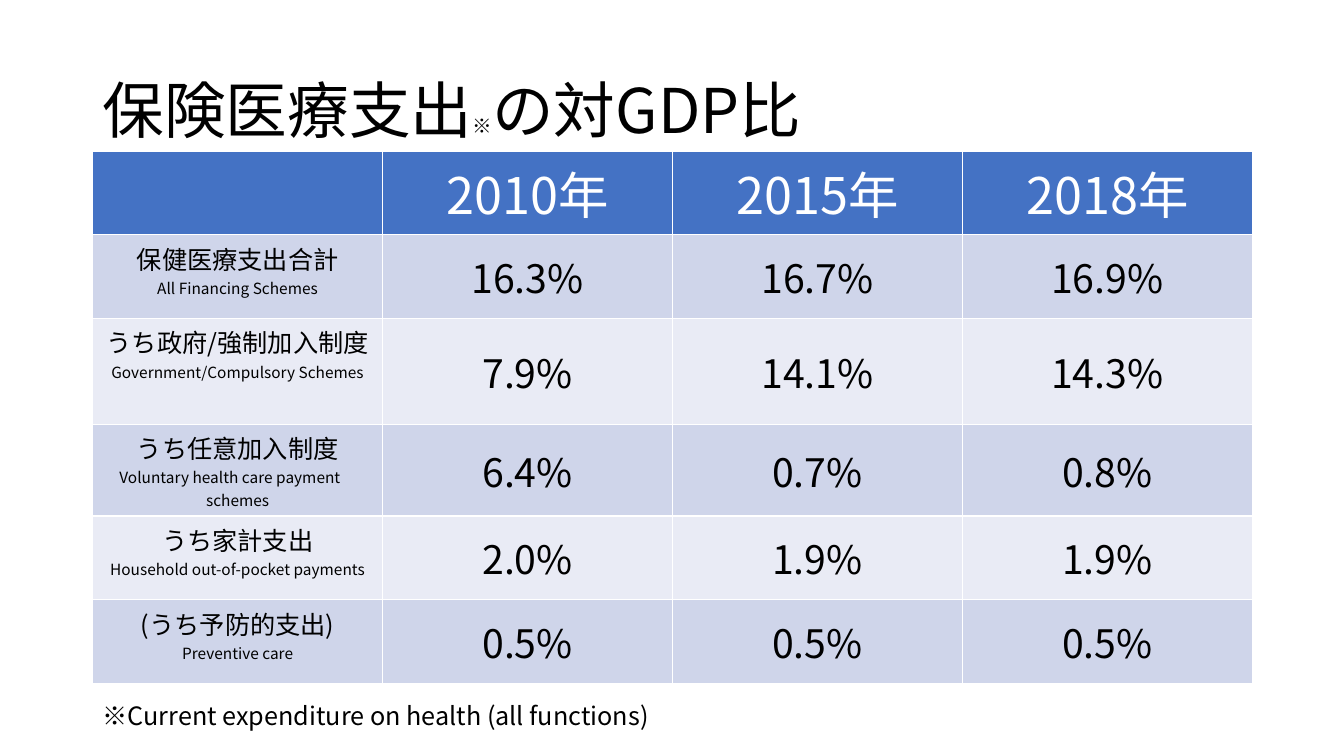
from dataclasses import dataclass

from lxml.etree import SubElement
from pptx import Presentation
from pptx.dml.color import RGBColor
from pptx.enum.text import MSO_ANCHOR, PP_ALIGN
from pptx.oxml.ns import qn
from pptx.slide import Slide
from pptx.table import Table, _Cell
from pptx.text.text import TextFrame, _Run
from pptx.util import Inches, Pt


@dataclass(frozen=True)
class Theme:
    font: str = "Noto Sans CJK JP"
    text: str = "000000"
    white: str = "FFFFFF"
    header: str = "4472C4"
    bands: tuple[str, str] = ("CFD5EA", "E9EBF5")
    title_size: int = 44
    mark_size: int = 14
    header_size: int = 36
    value_size: int = 28
    label_size: int = 18
    english_size: int = 11
    border_width: int = 1


THEME = Theme()
LEFT, WIDTH = 0.92, 11.5
ROW_HEIGHT = 0.83


@dataclass(frozen=True)
class Scheme:
    label: str
    english: str
    shares: tuple[str, str, str]
    height: float = ROW_HEIGHT


YEARS = ("2010年", "2015年", "2018年")
SCHEMES = (
    Scheme("保健医療支出合計", "All Financing Schemes", ("16.3%", "16.7%", "16.9%")),
    Scheme("うち政府/強制加入制度", "Government/Compulsory Schemes", ("7.9%", "14.1%", "14.3%"), 1.05),
    Scheme("うち任意加入制度", "Voluntary health care payment　schemes", ("6.4%", "0.7%", "0.8%"), 0.91),
    Scheme("うち家計支出", "Household out-of-pocket payments", ("2.0%", "1.9%", "1.9%")),
    Scheme("(うち予防的支出)", "Preventive care", ("0.5%", "0.5%", "0.5%")),
)


def format_run(run: _Run, size: int, color: str = THEME.text) -> None:
    run.font.name = THEME.font
    run.font.size = Pt(size)
    run.font.bold = False
    run.font.color.rgb = RGBColor.from_string(color)
    SubElement(run.font._element, qn("a:ea"), typeface=THEME.font)


def add_text_box(slide: Slide, top: float, width: float, height: float) -> TextFrame:
    box = slide.shapes.add_textbox(Inches(LEFT), Inches(top), Inches(width), Inches(height))
    box.text_frame.word_wrap = True
    return box.text_frame


def add_title(slide: Slide) -> None:
    frame = add_text_box(slide, 0.4, WIDTH, 1.45)
    frame.vertical_anchor = MSO_ANCHOR.MIDDLE
    paragraph = frame.paragraphs[0]
    paragraph.line_spacing = 0.9
    for text, size in (
        ("保険医療支出", THEME.title_size),
        ("※", THEME.mark_size),
        ("の対GDP比", THEME.title_size),
    ):
        run = paragraph.add_run()
        run.text = text
        format_run(run, size)


def style_cell(cell: _Cell, fill: str) -> None:
    properties = cell._tc.get_or_add_tcPr()
    for side in ("lnL", "lnR", "lnT", "lnB"):
        line = SubElement(properties, qn(f"a:{side}"), w=str(Pt(THEME.border_width)))
        line_fill = SubElement(line, qn("a:solidFill"))
        SubElement(line_fill, qn("a:srgbClr"), val=THEME.white)
    cell.fill.solid()
    cell.fill.fore_color.rgb = RGBColor.from_string(fill)


def write_cell(cell: _Cell, text: str, sizes: tuple[int, ...], color: str = THEME.text) -> None:
    cell.text_frame.text = text
    for paragraph, size in zip(cell.text_frame.paragraphs, sizes):
        paragraph.alignment = PP_ALIGN.CENTER
        for run in paragraph.runs:
            format_run(run, size, color)


def fill_header(table: Table) -> None:
    for column, year in enumerate(("", *YEARS)):
        cell = table.cell(0, column)
        style_cell(cell, THEME.header)
        write_cell(cell, year, (THEME.header_size,), THEME.white)


def fill_scheme(table: Table, row: int, scheme: Scheme) -> None:
    table.rows[row].height = Inches(scheme.height)
    band = THEME.bands[(row - 1) % 2]
    label_cell = table.cell(row, 0)
    style_cell(label_cell, band)
    write_cell(label_cell, f"{scheme.label}\n{scheme.english}", (THEME.label_size, THEME.english_size))
    for column, share in enumerate(scheme.shares, start=1):
        cell = table.cell(row, column)
        style_cell(cell, band)
        cell.vertical_anchor = MSO_ANCHOR.MIDDLE
        write_cell(cell, share, (THEME.value_size,))


def add_expenditure_table(slide: Slide) -> None:
    height = ROW_HEIGHT + sum(scheme.height for scheme in SCHEMES)
    table = slide.shapes.add_table(
        len(SCHEMES) + 1, len(YEARS) + 1,
        Inches(LEFT), Inches(1.5), Inches(WIDTH), Inches(height),
    ).table
    table.rows[0].height = Inches(ROW_HEIGHT)
    fill_header(table)
    for row, scheme in enumerate(SCHEMES, start=1):
        fill_scheme(table, row, scheme)


def add_footnote(slide: Slide) -> None:
    frame = add_text_box(slide, 6.9, 8.26, 0.4)
    frame.text = "※Current expenditure on health (all functions)"
    format_run(frame.paragraphs[0].runs[0], THEME.label_size)


def main() -> None:
    presentation = Presentation()
    presentation.slide_width = Inches(13.33)
    presentation.slide_height = Inches(7.5)
    slide = presentation.slides.add_slide(presentation.slide_layouts[6])
    add_title(slide)
    add_expenditure_table(slide)
    add_footnote(slide)
    presentation.save("out.pptx")


if __name__ == "__main__":
    main()
